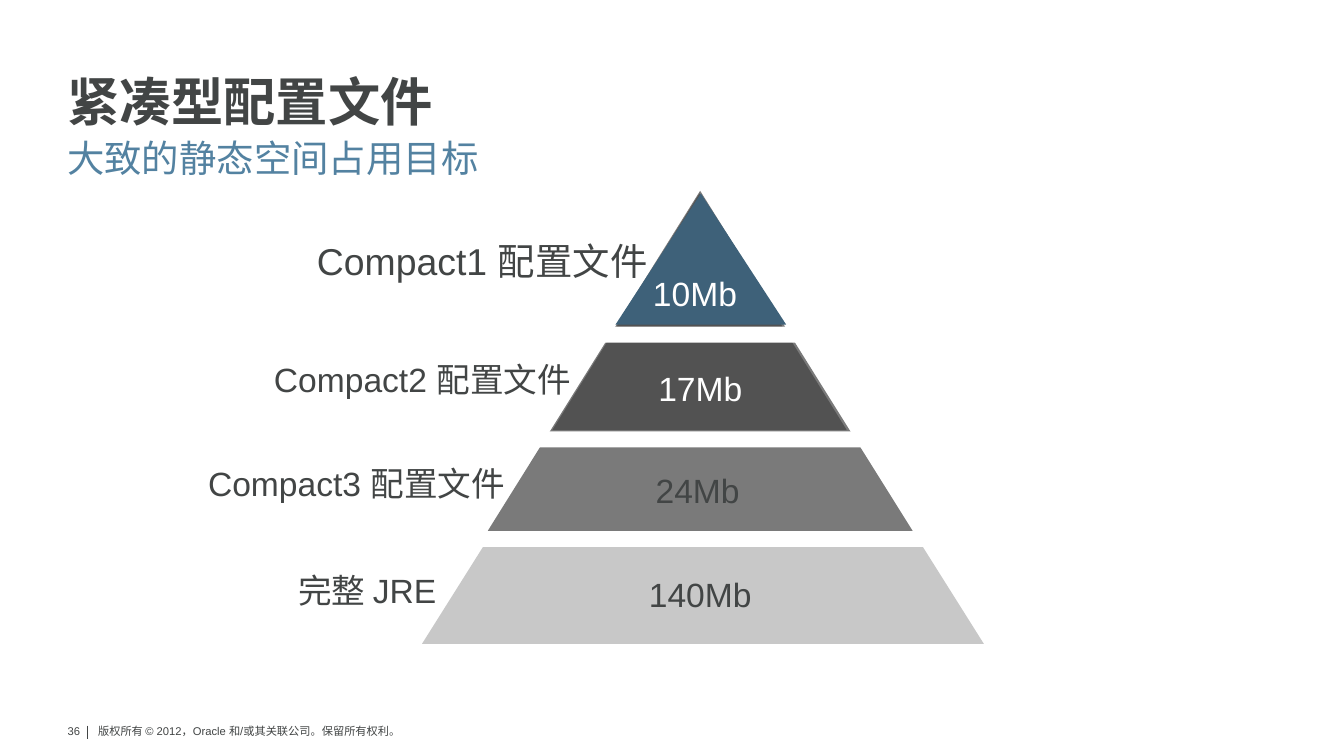
from lxml.etree import SubElement
from pptx import Presentation
from pptx.dml.color import RGBColor
from pptx.enum.shapes import MSO_CONNECTOR, MSO_SHAPE
from pptx.enum.text import MSO_ANCHOR, MSO_AUTO_SIZE, PP_ALIGN
from pptx.oxml.ns import qn
from pptx.util import Inches, Pt

CELL = Inches(0.1)
COLUMNS, ROWS = 100, 56.25
FONT = "Arial"
INK = RGBColor(0x42, 0x45, 0x45)
WHITE = RGBColor(0xFF, 0xFF, 0xFF)
SUBTITLE_BLUE = RGBColor(0x53, 0x82, 0xA1)
DEEP_BLUE = RGBColor(0x3E, 0x61, 0x79)
DARK_GREY = RGBColor(0x52, 0x52, 0x52)
MID_GREY = RGBColor(0x7A, 0x7A, 0x7A)
LIGHT_GREY = RGBColor(0xC8, 0xC8, 0xC8)

TIERS = [
    (MSO_SHAPE.ISOSCELES_TRIANGLE, (31.4, 14.7, 41.8, 33.2), LIGHT_GREY),
    (MSO_SHAPE.RECTANGLE, (26.4, 39.5, 53.5, 1.2), WHITE),
    (MSO_SHAPE.ISOSCELES_TRIANGLE, (36.3, 14.2, 31.6, 25.3), MID_GREY),
    (MSO_SHAPE.RECTANGLE, (28.9, 32.1, 53.5, 1.2), WHITE),
    (MSO_SHAPE.ISOSCELES_TRIANGLE, (41.1, 14.4, 21.9, 17.6), DARK_GREY),
    (MSO_SHAPE.RECTANGLE, (28.5, 24.3, 53.5, 1.2), WHITE),
    (MSO_SHAPE.ISOSCELES_TRIANGLE, (45.8, 14.4, 12.7, 9.75), DEEP_BLUE),
]
LABELS = [
    ("Compact1 配置文件", (22.6, 17.25, 26.8, 4.4), 20),
    ("Compact2 配置文件", (19.4, 26.2, 24.3, 4), 18),
    ("Compact3 配置文件", (14.5, 33.95, 24.3, 4), 18),
    ("完整 JRE", (21.2, 41.9, 12.5, 4), 18),
]
SIZES = [
    ("10Mb", (47.6, 19.8, 8.3, 4), WHITE),
    ("17Mb", (48, 26.9, 8.3, 4), WHITE),
    ("24Mb", (47.8, 34.5, 8.3, 4), INK),
    ("140Mb", (47.3, 42.2, 9.7, 4), INK),
]


def cells(*counts):
    return [int(count * CELL) for count in counts]


def write_text(frame, text, size=18, color=INK, bold=False, align=PP_ALIGN.LEFT,
               anchor=MSO_ANCHOR.TOP, wrap=True, insets=None):
    frame.auto_size = MSO_AUTO_SIZE.NONE
    frame.word_wrap = wrap
    frame.vertical_anchor = anchor
    if insets is not None:
        frame.margin_left = frame.margin_right = Inches(insets[0])
        frame.margin_top = frame.margin_bottom = Inches(insets[1])
    para = frame.paragraphs[0]
    para.alignment = align
    span = para.add_run()
    span.text = text
    span.font.name = FONT
    span.font.size = Pt(size)
    span.font.bold = bold
    span.font.color.rgb = color
    return para


def fill_placeholder(box, area, text, **text_format):
    box.left, box.top, box.width, box.height = cells(*area)
    para = write_text(box.text_frame, text, insets=(0, 0), **text_format)
    para.space_before = Pt(0)
    return para


def add_text(page, area, text, **text_format):
    box = page.shapes.add_textbox(*cells(*area))
    write_text(box.text_frame, text, **text_format)


def add_tier(page, preset, area, color):
    shape = page.shapes.add_shape(preset, *cells(*area))
    shape.shadow.inherit = False
    shape.fill.solid()
    shape.fill.fore_color.rgb = color
    shape.line.fill.background()


def add_headings(page):
    title = fill_placeholder(page.shapes.title, (5, 5.3, 90, 4.6), "紧凑型配置文件",
                             size=28, bold=True, anchor=MSO_ANCHOR.BOTTOM)
    title.line_spacing = 0.9
    subtitle = fill_placeholder(page.placeholders[1], (5, 10.05, 90, 3.3),
                                "大致的静态空间占用目标", size=20, color=SUBTITLE_BLUE)
    subtitle.space_after = Pt(6)
    properties = subtitle._p.get_or_add_pPr()
    properties.set("marL", "0")
    properties.set("indent", "0")
    SubElement(properties, qn("a:buNone"))


def add_footer(page):
    add_text(page, (6.9, 53.7, 27.4, 2.4),
             "版权所有 © 2012，Oracle 和/或其关联公司。保留所有权利。",
             size=6, insets=(0.04, 0.02))
    divider = page.shapes.add_connector(MSO_CONNECTOR.STRAIGHT, *cells(6.5, 54, 6.5, 55))
    divider.line.color.rgb = INK
    divider.line.width = Pt(0.5)
    SubElement(divider._element.spPr, qn("a:effectLst"))
    add_text(page, (3.95, 53.4, 3, 2), "36", size=6, align=PP_ALIGN.RIGHT, wrap=False)


def main():
    deck = Presentation()
    deck.slide_width, deck.slide_height = cells(COLUMNS, ROWS)
    page = deck.slides.add_slide(deck.slide_layouts[1])
    add_footer(page)
    add_headings(page)
    for preset, area, color in TIERS:
        add_tier(page, preset, area, color)
    for text, area, size in LABELS:
        add_text(page, area, text, size=size)
    for text, area, color in SIZES:
        add_text(page, area, text, color=color, wrap=False)
    deck.save("out.pptx")


if __name__ == "__main__":
    main()
